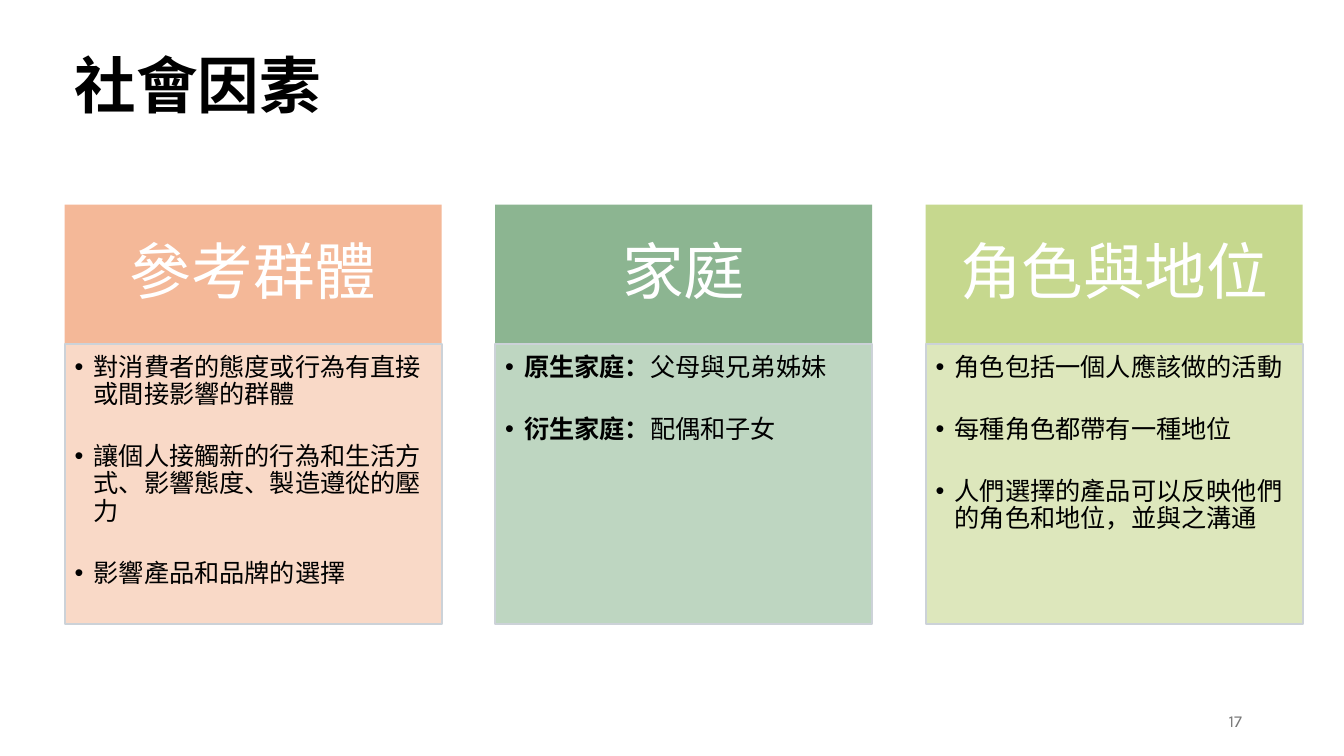
from dataclasses import dataclass

from lxml import etree
from pptx import Presentation
from pptx import util as u
from pptx.dml import color
from pptx.enum import shapes, text
from pptx.oxml import ns


@dataclass(frozen=True)
class Theme:
    """Colours, font and type sizes of the slide."""
    font: str = "Karla"
    ink: str = "000000"
    light: str = "FFFFFF"
    grey: str = "797979"
    edge: str = "CCD2D8"
    big: int = 44
    body: int = 18
    small: int = 12


THEME = Theme()
LEFT, TOP, STEP = 1.63, 5.16, 10.85
WIDTH, HEAD, BODY = 9.5, 3.52, 7.04

CARDS = [
    ("參考群體", "F4B898", "F9D9C7", 100, [
        ("", "對消費者的態度或行為有直接或間接影響的群體"),
        ("", "讓個人接觸新的行為和生活方式、影響態度、製造遵從的壓力"),
        ("", "影響產品和品牌的選擇"),
    ]),
    ("家庭", "8CB591", "B8D2BB", 90, [
        ("原生家庭：", "父母與兄弟姊妹"),
        ("衍生家庭：", "配偶和子女"),
    ]),
    ("角色與地位", "C6D88E", "DAE5B5", 90, [
        ("", "角色包括一個人應該做的活動"),
        ("", "每種角色都帶有一種地位"),
        ("", "人們選擇的產品可以反映他們的角色和地位，並與之溝通"),
    ]),
]


def style(run, size, tint, bold=False):
    """Give a run its font, size, colour and weight."""
    font = run.font
    font.name, font.size, font.bold = THEME.font, u.Pt(size), bold
    font.color.rgb = color.RGBColor.from_string(tint)


def fade(shape, alpha):
    """Set the opacity of a shape's fill and line in percent."""
    for node in shape.fill._xPr.iter(ns.qn("a:srgbClr")):
        etree.SubElement(node, ns.qn("a:alpha"), val=str(alpha * 1000))


def inset(frame, left, top, right, bottom):
    """Set the four margins of a text frame."""
    frame.margin_left, frame.margin_top = u.Cm(left), u.Cm(top)
    frame.margin_right, frame.margin_bottom = u.Cm(right), u.Cm(bottom)


def label(slide, words, box, size, tint, bold=False):
    """Add a text box with one line and return its frame."""
    frame = slide.shapes.add_textbox(*map(u.Cm, box)).text_frame
    frame.text = words
    style(frame.paragraphs[0].runs[0], size, tint, bold)
    return frame


def block(slide, left, top, height, tint):
    """Add a plain filled rectangle."""
    shape = slide.shapes.add_shape(
        shapes.MSO_SHAPE.RECTANGLE,
        u.Cm(left), u.Cm(top), u.Cm(WIDTH), u.Cm(height))
    shape.shadow.inherit = False
    shape.fill.solid()
    shape.fill.fore_color.rgb = color.RGBColor.from_string(tint)
    shape.line.fill.background()
    shape.text_frame.word_wrap = True
    return shape


def header(slide, left, words, tint):
    """Add the coloured heading of a card."""
    frame = block(slide, left, TOP, HEAD, tint).text_frame
    inset(frame, 0.86, 0.5, 0.86, 0.5)
    frame.vertical_anchor = text.MSO_ANCHOR.MIDDLE
    frame.text = words
    para = frame.paragraphs[0]
    para.alignment, para.line_spacing = text.PP_ALIGN.CENTER, 0.9
    style(para.runs[0], THEME.big, THEME.light)


def bullet(para, lead, rest):
    """Fill a bulleted paragraph with a bold lead and plain words."""
    props = para._p.get_or_add_pPr()
    props.set("marL", str(u.Cm(0.48)))
    props.set("indent", str(-u.Cm(0.48)))
    etree.SubElement(props, ns.qn("a:buFont"), typeface="Arial")
    etree.SubElement(props, ns.qn("a:buChar"), char="•")
    para.alignment, para.line_spacing = text.PP_ALIGN.LEFT, 0.9
    para.space_after = u.Pt(25)
    for words, bold in ((lead, True), (rest, False)):
        if words:
            run = para.add_run()
            run.text = words
            style(run, THEME.body, THEME.ink, bold)


def panel(slide, left, items, tint, alpha):
    """Add the bulleted body of a card."""
    shape = block(slide, left, TOP + HEAD, BODY, tint)
    fade(shape, alpha)
    shape.line.color.rgb = color.RGBColor.from_string(THEME.edge)
    shape.line.width = u.Pt(1.5)
    frame = shape.text_frame
    inset(frame, 0.25, 0.25, 0.36, 0.4)
    frame.vertical_anchor = text.MSO_ANCHOR.TOP
    for num, (lead, rest) in enumerate(items):
        para = frame.add_paragraph() if num else frame.paragraphs[0]
        bullet(para, lead, rest)


def main():
    """Build the slide and save it."""
    deck = Presentation()
    deck.slide_width, deck.slide_height = u.Cm(33.87), u.Cm(19.05)
    slide = deck.slides.add_slide(deck.slide_layouts[6])

    title = label(slide, "社會因素", (LEFT, 1.07, 6.78, 2.13),
                  THEME.big, THEME.ink, True)
    title.word_wrap = False
    title.auto_size = text.MSO_AUTO_SIZE.SHAPE_TO_FIT_TEXT

    for num, (name, dark, pale, alpha, items) in enumerate(CARDS):
        left = LEFT + num * STEP
        header(slide, left, name, dark)
        panel(slide, left, items, pale, alpha)

    page = label(slide, "17", (23.93, 17.65, 7.62, 1.02),
                 THEME.small, THEME.grey)
    page.word_wrap = True
    page.vertical_anchor = text.MSO_ANCHOR.MIDDLE
    page.paragraphs[0].alignment = text.PP_ALIGN.RIGHT
    deck.save("out.pptx")


if __name__ == "__main__":
    main()
